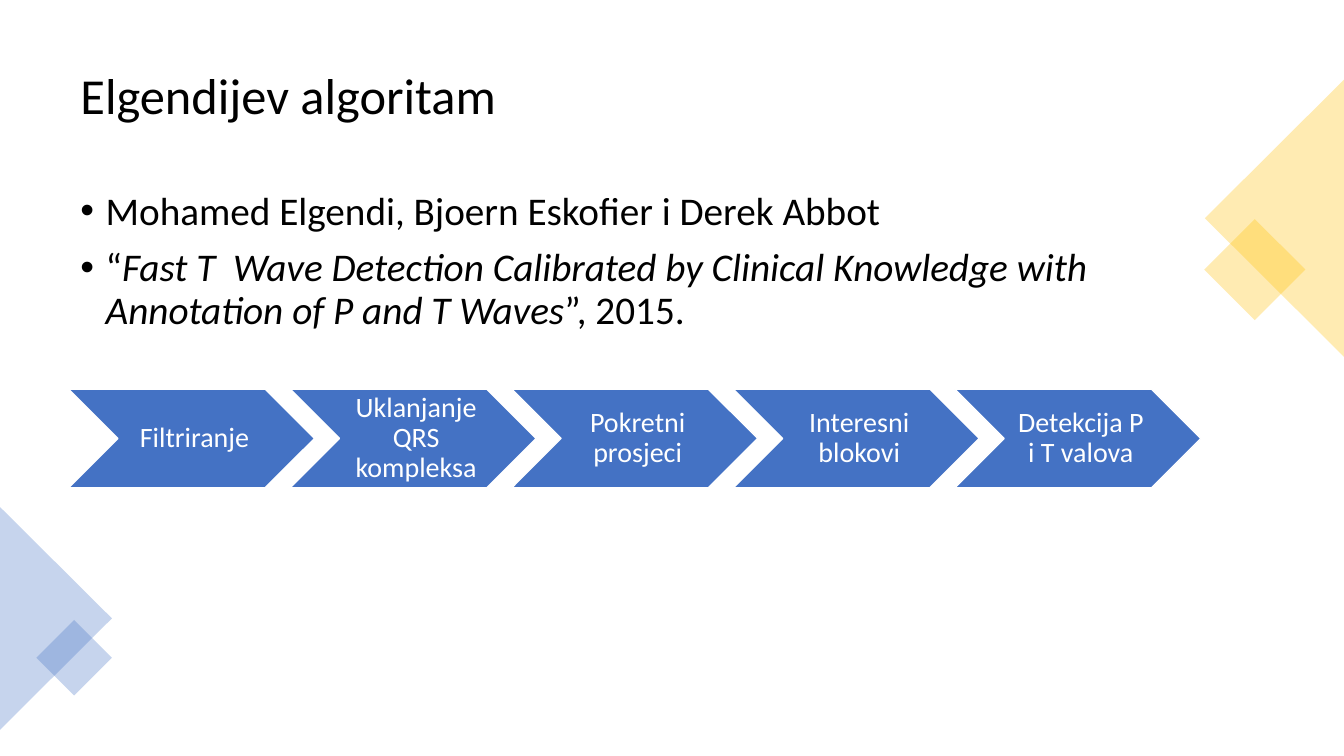
from dataclasses import dataclass

from lxml import etree
from pptx import Presentation
from pptx import util as u
from pptx.dml.color import RGBColor
from pptx.enum import shapes, text
from pptx.oxml import ns


@dataclass(frozen=True)
class Theme:
    font: str = "Calibri"
    ink: RGBColor = RGBColor(0x00, 0x00, 0x00)
    paper: RGBColor = RGBColor(0xFF, 0xFF, 0xFF)
    blue: RGBColor = RGBColor(0x44, 0x72, 0xC4)
    gold: RGBColor = RGBColor(0xFF, 0xC0, 0x00)
    title_size: int = 36
    body_size: int = 28
    step_size: int = 20
    accent_opacity: int = 30
    line_spacing: float = 0.9


THEME = Theme()

TITLE = "Elgendijev algoritam"
AUTHORS = "Mohamed Elgendi, Bjoern Eskofier i Derek Abbot"
PAPER_TITLE = (
    "Fast T  Wave Detection Calibrated by Clinical Knowledge with "
    "Annotation of P and T Waves"
)
CITATION = [("“", False), (PAPER_TITLE, True), ("”, 2015.", False)]
STEPS = [
    "Filtriranje",
    "Uklanjanje QRS kompleksa",
    "Pokretni prosjeci",
    "Interesni blokovi",
    "Detekcija P i T valova",
]


def inches(*lengths):
    return [u.Inches(length) for length in lengths]


def format_paragraph(paragraph, size, color):
    paragraph.line_spacing = THEME.line_spacing
    for run in paragraph.runs:
        run.font.name = THEME.font
        run.font.size = u.Pt(size)
        run.font.color.rgb = color


def add_bullet(paragraph, indent):
    properties = paragraph._p.get_or_add_pPr()
    properties.set("marL", str(u.Inches(indent)))
    properties.set("indent", str(-u.Inches(indent)))
    font = etree.SubElement(properties, ns.qn("a:buFont"))
    font.set("typeface", "Arial")
    bullet = etree.SubElement(properties, ns.qn("a:buChar"))
    bullet.set("char", "•")


def add_title(slide, left, top, width, height):
    shape = slide.shapes.add_textbox(*inches(left, top, width, height))
    frame = shape.text_frame
    frame.word_wrap = True
    frame.vertical_anchor = text.MSO_ANCHOR.MIDDLE
    frame.text = TITLE
    format_paragraph(frame.paragraphs[0], THEME.title_size, THEME.ink)


def add_body(slide, left, top, width, height):
    shape = slide.shapes.add_textbox(*inches(left, top, width, height))
    frame = shape.text_frame
    frame.word_wrap = True
    frame.text = AUTHORS
    citation = frame.add_paragraph()
    for wording, italic in CITATION:
        run = citation.add_run()
        run.text = wording
        run.font.italic = italic
    for paragraph in frame.paragraphs:
        format_paragraph(paragraph, THEME.body_size, THEME.ink)
        paragraph.space_before = u.Pt(10)
        add_bullet(paragraph, 0.25)


def add_accent(slide, kind, box, rotation, color):
    shape = slide.shapes.add_shape(kind, *inches(*box))
    shape.shadow.inherit = False
    shape.rotation = rotation
    shape.fill.solid()
    shape.fill.fore_color.rgb = color
    shape.line.fill.background()
    fill_color = shape.fill._xPr.find(ns.qn("a:solidFill"))[0]
    alpha = etree.SubElement(fill_color, ns.qn("a:alpha"))
    alpha.set("val", str(THEME.accent_opacity * 1000))


def add_right_accent(slide, left, top, width, height):
    add_accent(slide, shapes.MSO_SHAPE.RECTANGLE,
               (left + 0.14, top + 1.54, 0.71, 0.71), 45, THEME.gold)
    add_accent(slide, shapes.MSO_SHAPE.ISOSCELES_TRIANGLE,
               (left + (width - height) / 2, top + (height - width) / 2,
                height, width), 270, THEME.gold)


def add_left_accent(slide, left, top, width, height):
    add_accent(slide, shapes.MSO_SHAPE.ISOSCELES_TRIANGLE,
               (left + (width - height) / 2, top + (height - width) / 2,
                height, width), 90, THEME.blue)
    add_accent(slide, shapes.MSO_SHAPE.RECTANGLE,
               (left + 0.47, top + 1.23, 0.53, 0.53), 45, THEME.blue)


def add_process(slide, left, top, width, height):
    step_width = 2.44
    pitch = (width - step_width) / (len(STEPS) - 1)
    for index, step in enumerate(STEPS):
        shape = slide.shapes.add_shape(
            shapes.MSO_SHAPE.CHEVRON,
            *inches(left + index * pitch, top, step_width, height))
        shape.shadow.inherit = False
        shape.fill.solid()
        shape.fill.fore_color.rgb = THEME.blue
        shape.line.color.rgb = THEME.paper
        shape.line.width = u.Pt(1)
        frame = shape.text_frame
        frame.word_wrap = True
        frame.vertical_anchor = text.MSO_ANCHOR.MIDDLE
        frame.margin_left = u.Inches(0.09)
        frame.margin_top = frame.margin_right = frame.margin_bottom = u.Inches(0.03)
        frame.text = step
        paragraph = frame.paragraphs[0]
        paragraph.alignment = text.PP_ALIGN.CENTER
        format_paragraph(paragraph, THEME.step_size, THEME.paper)


def main():
    presentation = Presentation()
    presentation.slide_width, presentation.slide_height = inches(13.33, 7.5)
    slide = presentation.slides.add_slide(presentation.slide_layouts[6])
    slide.background.fill.solid()
    slide.background.fill.fore_color.rgb = THEME.paper
    add_title(slide, 0.7, 0.35, 11.93, 1.24)
    add_body(slide, 0.7, 1.85, 11.93, 1.59)
    add_right_accent(slide, 11.95, 0.78, 1.39, 2.77)
    add_left_accent(slide, 0, 5.03, 1.11, 2.21)
    add_process(slide, 0.68, 3.86, 11.23, 0.98)
    presentation.save("out.pptx")


if __name__ == "__main__":
    main()
